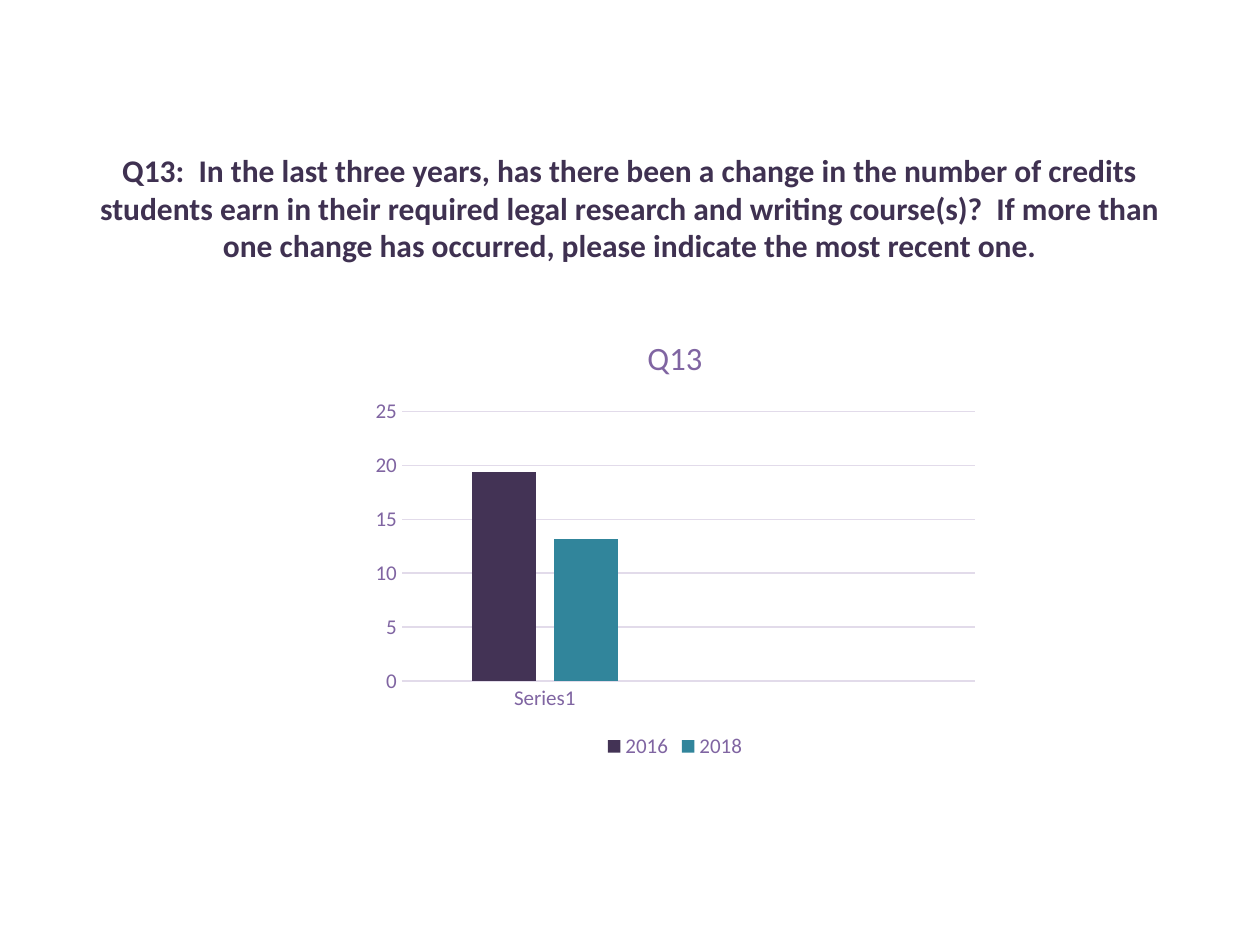
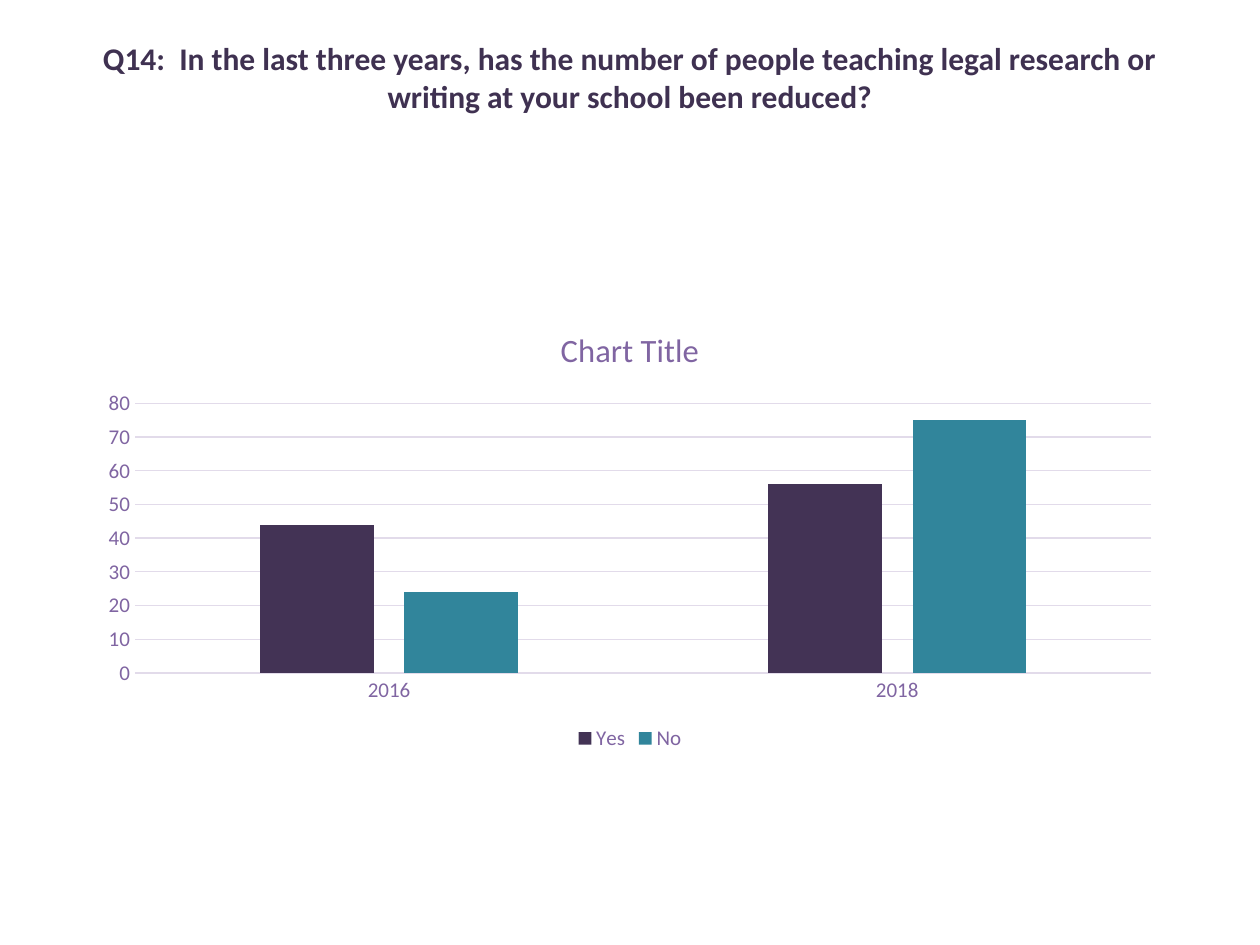
import pptx
import pptx.chart.data
import pptx.dml.color
import pptx.enum.chart
import pptx.enum.text
import pptx.util

RGBColor = pptx.dml.color.RGBColor
TITLE_INK = RGBColor(0x3F, 0x31, 0x51)
CHART_INK = RGBColor(0x80, 0x65, 0xA2)
GRID = RGBColor(0xE2, 0xDB, 0xEA)
BAR_COLORS = (RGBColor(0x43, 0x33, 0x55), RGBColor(0x31, 0x85, 0x9B))
FONT = "Calibri"
PX_PER_INCH = 126
TITLE_ONLY = 5


def px(length):
    return pptx.util.Emu(round(length * 914400 / PX_PER_INCH))


def style_font(font, size, color, bold=False):
    font.name = FONT
    font.size = pptx.util.Pt(size)
    font.bold = bold
    font.color.rgb = color


def style_line(line):
    line.color.rgb = GRID
    line.width = pptx.util.Pt(0.75)


class SurveyDeck:
    def __init__(self):
        self.presentation = pptx.Presentation()
        self.presentation.slide_width = px(1260)
        self.presentation.slide_height = px(945)
        self.slide = None

    def add_slide(self):
        layout = self.presentation.slide_layouts[TITLE_ONLY]
        self.slide = self.presentation.slides.add_slide(layout)

    def question(self, text, left, top, width, height, space_below):
        """Fill the title; space_below lifts the centred text inside its box."""
        title = self.slide.shapes.title
        title.left, title.top = px(left), px(top)
        title.width, title.height = px(width), px(height)
        frame = title.text_frame
        frame.text = text
        frame.word_wrap = True
        frame.auto_size = pptx.enum.text.MSO_AUTO_SIZE.NONE
        frame.vertical_anchor = pptx.enum.text.MSO_ANCHOR.MIDDLE
        frame.margin_top = 0
        frame.margin_bottom = px(space_below)
        paragraph = frame.paragraphs[0]
        paragraph.alignment = pptx.enum.text.PP_ALIGN.CENTER
        style_font(paragraph.runs[0].font, 18, TITLE_INK, bold=True)

    def column_chart(self, title, categories, series, left, top, width, height):
        data = pptx.chart.data.CategoryChartData()
        data.categories = categories
        for name, values in series.items():
            data.add_series(name, values)
        chart = self.slide.shapes.add_chart(
            pptx.enum.chart.XL_CHART_TYPE.COLUMN_CLUSTERED,
            px(left), px(top), px(width), px(height), data).chart
        style_font(chart.font, 10, TITLE_INK)

        chart.has_title = True
        chart.chart_title.include_in_layout = False
        frame = chart.chart_title.text_frame
        frame.text = title
        style_font(frame.paragraphs[0].runs[0].font, 18.6, CHART_INK)

        chart.has_legend = True
        chart.legend.position = pptx.enum.chart.XL_LEGEND_POSITION.BOTTOM
        chart.legend.include_in_layout = False
        style_font(chart.legend.font, 12, CHART_INK)

        for axis in (chart.category_axis, chart.value_axis):
            axis.major_tick_mark = pptx.enum.chart.XL_TICK_MARK.NONE
            axis.minor_tick_mark = pptx.enum.chart.XL_TICK_MARK.NONE
            style_font(axis.tick_labels.font, 12, CHART_INK)
        style_line(chart.category_axis.format.line)
        chart.value_axis.format.line.fill.background()
        chart.value_axis.has_major_gridlines = True
        style_line(chart.value_axis.major_gridlines.format.line)

        plot = chart.plots[0]
        plot.gap_width = 219
        plot.overlap = -27
        plot.vary_by_categories = False
        for bars, color in zip(plot.series, BAR_COLORS):
            bars.invert_if_negative = False
            bars.format.fill.solid()
            bars.format.fill.fore_color.rgb = color


def main():
    deck = SurveyDeck()

    deck.add_slide()
    deck.question(
        "Q13:  In the last three years, has there been a change in the number "
        "of credits students earn in their required legal research and writing "
        "course(s)?  If more than one change has occurred, please indicate the "
        "most recent one.", 87, 156, 1086, 137, space_below=34)
    deck.column_chart("Q13", ["Series1", ""],
                      {"2016": (19.4, None), "2018": (13.2, None)},
                      363, 314, 624, 450)

    deck.add_slide()
    deck.question(
        "Q14:  In the last three years, has the number of people teaching legal "
        "research or writing at your school been reduced?",
        63, 38, 1134, 157, space_below=79)
    deck.column_chart("Chart Title", ["2016", "2018"],
                      {"Yes": (44, 56), "No": (24, 75)},
                      87, 306, 1086, 450)

    deck.presentation.save("out.pptx")


if __name__ == "__main__":
    main()
